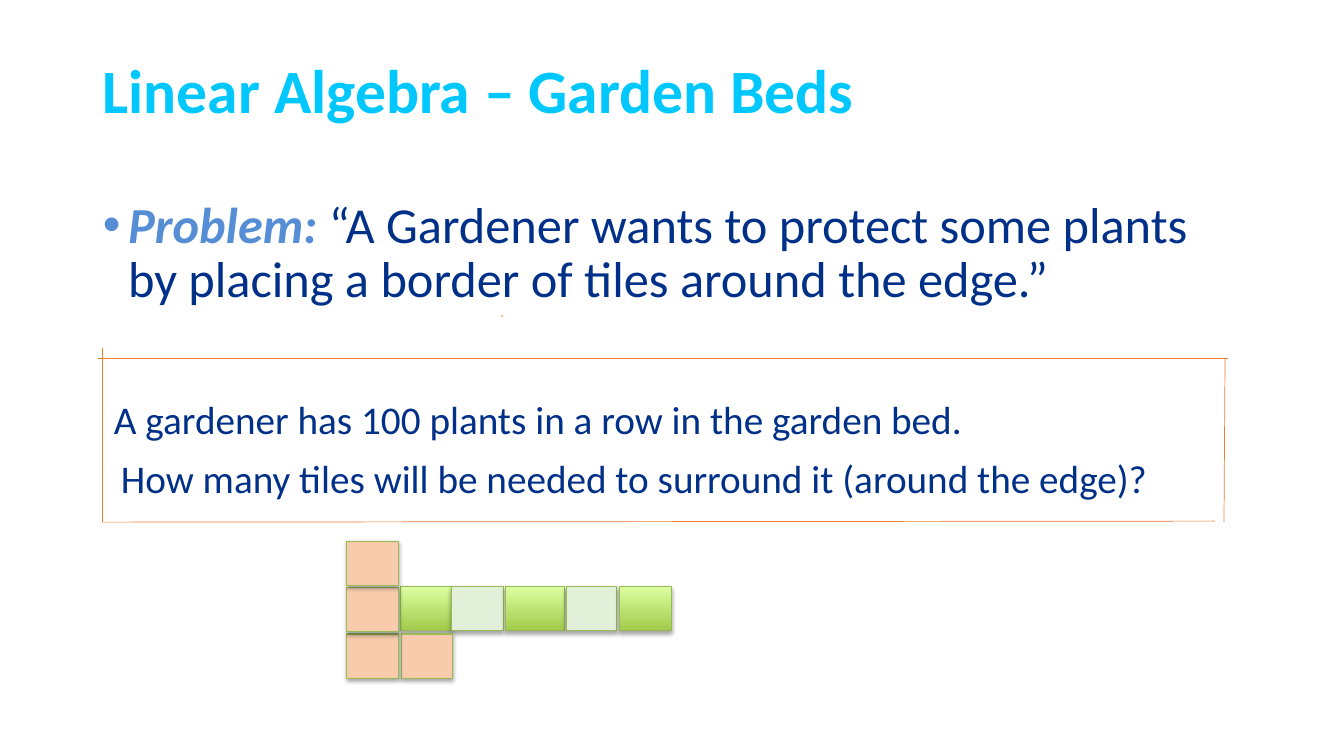
from lxml import etree
from pptx import Presentation
from pptx.dml.color import RGBColor
from pptx.enum.shapes import MSO_CONNECTOR, MSO_SHAPE
from pptx.enum.text import MSO_ANCHOR, MSO_AUTO_SIZE, PP_ALIGN
from pptx.oxml import parse_xml
from pptx.oxml.ns import nsdecls, qn
from pptx.util import Inches, Pt

CYAN = RGBColor(0x00, 0xC8, 0xFF)
BLUE = RGBColor(0x55, 0x8E, 0xD5)
NAVY = RGBColor(0x00, 0x30, 0x87)
LIME = RGBColor(0xDC, 0xFF, 0xA0)
GREEN = RGBColor(0xA0, 0xCA, 0x4A)
PALE = RGBColor(0xE2, 0xF0, 0xD9)
PEACH = RGBColor(0xF8, 0xCB, 0xAD)
EDGE = RGBColor(0x98, 0xB9, 0x54)
ORANGE = RGBColor(0xED, 0x7D, 0x31)
FONT = "Calibri"

# Content
TITLE = "Linear Algebra – Garden Beds"
PROBLEM = ("Problem: ", "“A Gardener wants to protect some plants "
           "by placing a border of tiles around the edge.”")
# Text, left indent (inches), space before (points)
QUESTIONS = [
    ("A gardener has 100 plants in a row in the garden bed.", 0.11, 66),
    ("How many tiles will be needed to surround it (around the edge)?", 0.18, 12),
]
# Left and width of each plant; the fills alternate
PLANTS = [(3.97, 0.51), (4.48, 0.51), (5.01, 0.59), (5.62, 0.5), (6.14, 0.52)]
PLANT_TOP = 5.82
# Column and row of each border tile
BORDER_TILES = [(1, 2), (0, 2), (0, 1), (0, 0)]
TILE_LEFT, TILE_TOP, TILE_WIDTH, TILE_HEIGHT = 3.44, 5.37, 0.51, 0.44
COLUMN_STEP, ROW_STEP = 0.54, 0.46
# Start x, start y, end x, end y
FRAME_LINES = [
    (0.97, 3.56, 12.18, 3.56),
    (12.15, 3.56, 12.14, 5.18),
    (1.01, 5.18, 12.05, 5.17),
    (1.02, 3.45, 1.02, 5.18),
    (4.99, 3.13, 4.97, 3.14),
]
SHADOW = (f'<a:effectLst {nsdecls("a")}><a:outerShdw blurRad="39370" dist="22860" '
          'dir="5400000" rotWithShape="0"><a:srgbClr val="000000">'
          '<a:alpha val="35000"/></a:srgbClr></a:outerShdw></a:effectLst>')


def place(shape, left, top, width, height):
    shape.left, shape.top = Inches(left), Inches(top)
    shape.width, shape.height = Inches(width), Inches(height)


def style(span, size, color, bold=False, italic=False):
    font = span.font
    font.name, font.size, font.bold, font.italic = FONT, Pt(size), bold, italic
    font.color.rgb = color


def set_layout(para, left, hanging, before, bullet=None):
    props = para._p.get_or_add_pPr()
    props.set("marL", str(Inches(left)))
    props.set("indent", str(-Inches(hanging)))
    if bullet:
        etree.SubElement(props, qn("a:buFont")).set("typeface", "Arial")
        etree.SubElement(props, qn("a:buChar")).set("char", bullet)
    else:
        etree.SubElement(props, qn("a:buNone"))
    para.line_spacing = 0.9
    para.space_before = Pt(before)


def add_tile(left, top, width, color=None):
    tile = page.shapes.add_shape(MSO_SHAPE.RECTANGLE, Inches(left), Inches(top),
                                 Inches(width), Inches(TILE_HEIGHT))
    if color is None:
        tile.fill.gradient()
        tile.fill.gradient_angle = 270
        for stop, shade, position in zip(tile.fill.gradient_stops, (LIME, GREEN), (0, 1)):
            stop.color.rgb, stop.position = shade, position
    else:
        tile.fill.solid()
        tile.fill.fore_color.rgb = color
    tile.line.color.rgb = EDGE
    tile.line.width = Pt(0.75)
    tile._element.spPr.append(parse_xml(SHADOW))


deck = Presentation()
deck.slide_width, deck.slide_height = Inches(13.33), Inches(7.5)
page = deck.slides.add_slide(deck.slide_layouts[1])

# Title
title = page.shapes.title
place(title, 0.92, 0.36, 11.78, 1.14)
title.text_frame.text = TITLE
title.text_frame.vertical_anchor = MSO_ANCHOR.MIDDLE
title.text_frame.auto_size = MSO_AUTO_SIZE.NONE
heading = title.text_frame.paragraphs[0]
heading.alignment = PP_ALIGN.LEFT
heading.line_spacing = 0.9
style(heading.runs[0], 44, CYAN, bold=True)

# Problem and questions
body = page.placeholders[1]
place(body, 0.92, 1.93, 11.5, 4.82)
frame = body.text_frame
frame.auto_size = MSO_AUTO_SIZE.NONE
para = frame.paragraphs[0]
set_layout(para, 0.25, 0.25, 0, "•")
for text in PROBLEM:
    para.add_run().text = text
label, statement = para.runs
style(label, 36, BLUE, bold=True, italic=True)
style(statement, 36, NAVY)
for text, left, before in QUESTIONS:
    para = frame.add_paragraph()
    para.text = text
    set_layout(para, left, 0, before)
    style(para.runs[0], 28, NAVY)

# Garden bed and its border
for number, (left, width) in enumerate(PLANTS):
    add_tile(left, PLANT_TOP, width, PALE if number % 2 else None)
for column, row in BORDER_TILES:
    add_tile(TILE_LEFT + column * COLUMN_STEP, TILE_TOP + row * ROW_STEP,
             TILE_WIDTH, PEACH)

# Frame around the questions
for ends in FRAME_LINES:
    line = page.shapes.add_connector(MSO_CONNECTOR.STRAIGHT, *map(Inches, ends))
    line.line.color.rgb = ORANGE
    line.line.width = Pt(0.5)
    etree.SubElement(line._element.spPr, qn("a:effectLst"))

deck.save("out.pptx")
